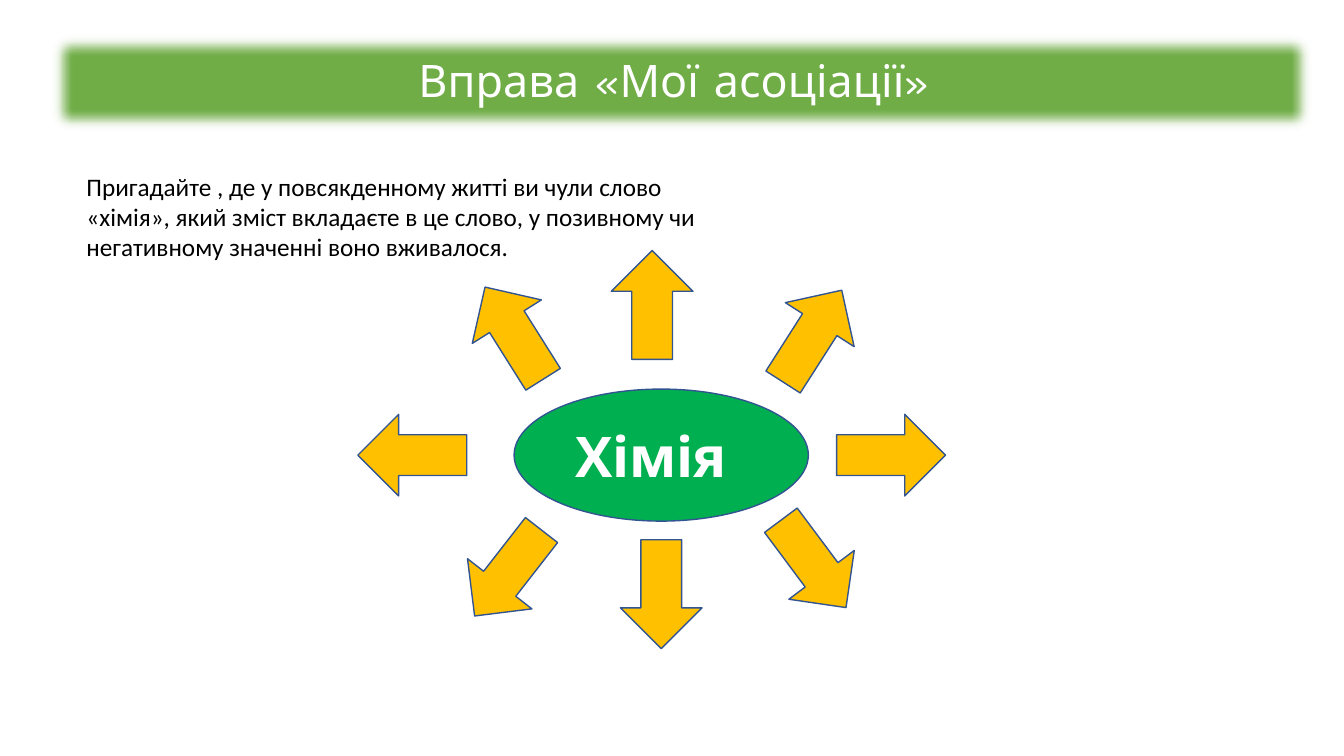
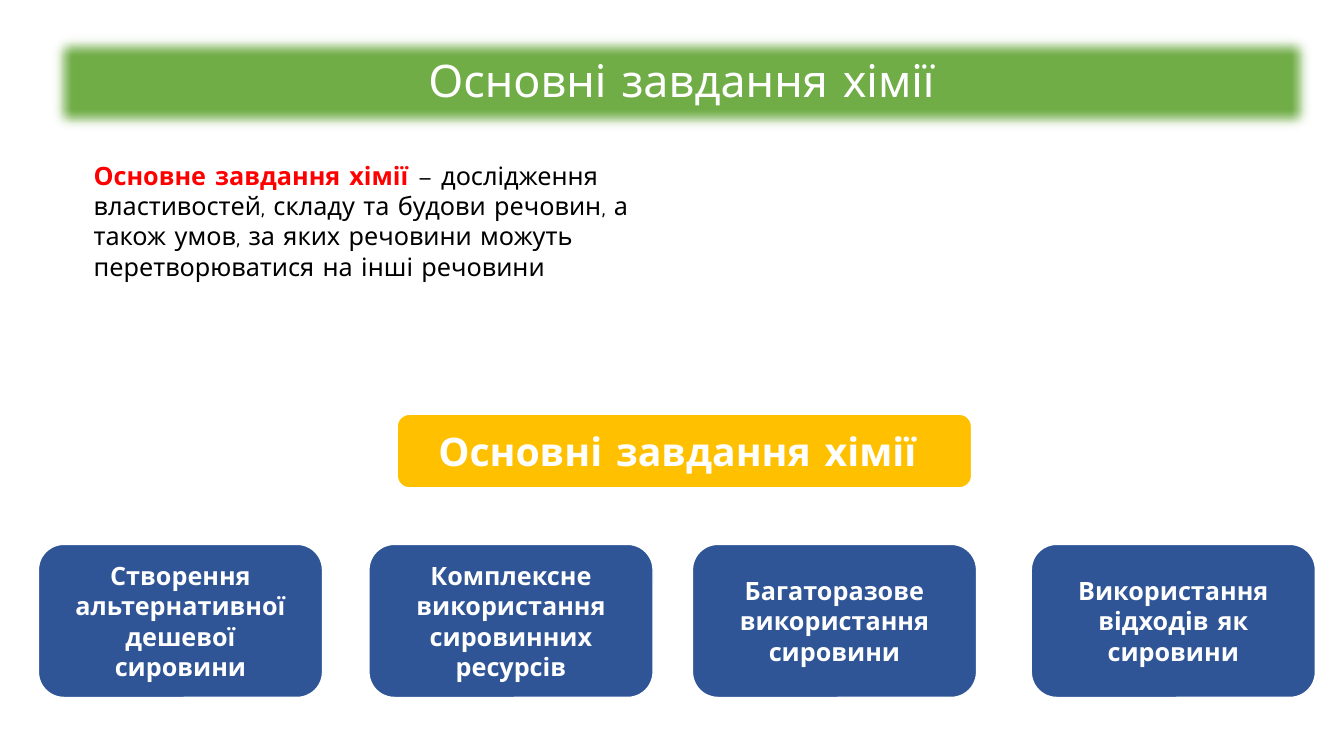
from lxml import etree
from pptx import Presentation
from pptx.dml.color import RGBColor
from pptx.enum.shapes import MSO_SHAPE as Preset
from pptx.enum.text import MSO_ANCHOR as Anchor, MSO_AUTO_SIZE as AutoSize, PP_ALIGN as Align
from pptx.oxml.ns import qn
from pptx.util import Pt

COLORS = {
    "white": "FFFFFF",
    "black": "000000",
    "red": "FF0000",
    "band": "70AD47",
    "oval": "00B050",
    "amber": "FFC000",
    "navy": "2F5597",
    "outline": "325491",
}


def color(name):
    return RGBColor.from_string(COLORS[name])


class Deck:
    """Holds the shared style and the slide being built."""

    display_font = "Comic Neue"
    body_font = "Calibri"
    body_size = 18

    def __init__(self):
        self.presentation = Presentation()
        self.presentation.slide_width = Pt(960)
        self.presentation.slide_height = Pt(540)
        self.slide = None

    def new_slide(self, title):
        blank = self.presentation.slide_layouts[6]
        self.slide = self.presentation.slides.add_slide(blank)
        self.title_band(title)

    def style_font(self, font, size, name, color_name, bold=False):
        font.size = Pt(size)
        font.name = name
        font.bold = bold
        font.color.rgb = color(color_name)

    def shape(self, preset, box, fill, line=None):
        shape = self.slide.shapes.add_shape(preset, *map(Pt, box))
        shape.shadow.inherit = False
        shape.fill.solid()
        shape.fill.fore_color.rgb = color(fill)
        if line:
            shape.line.color.rgb = color(line)
            shape.line.width = Pt(1)
        else:
            shape.line.fill.background()
        return shape

    def label(self, shape, text, size, bold=True):
        frame = shape.text_frame
        frame.word_wrap = True
        frame.vertical_anchor = Anchor.MIDDLE
        paragraph = frame.paragraphs[0]
        paragraph.text = text
        paragraph.alignment = Align.CENTER
        self.style_font(paragraph.font, size, self.display_font, "white", bold)
        return paragraph

    def title_band(self, text):
        band = self.shape(Preset.RECTANGLE, (34, 22.2, 905.8, 74.2), "band")
        effects = band.element.spPr.find(qn("a:effectLst"))
        etree.SubElement(effects, qn("a:softEdge"), rad=str(Pt(10)))
        self.label(band, text, 32, bold=False).line_spacing = 0.9

    def text_box(self, box, font_name, *parts):
        """Each part is (text, color name, bold)."""
        frame = self.slide.shapes.add_textbox(*map(Pt, box)).text_frame
        frame.word_wrap = True
        frame.auto_size = AutoSize.SHAPE_TO_FIT_TEXT
        paragraph = frame.paragraphs[0]
        for text, color_name, bold in parts:
            run = paragraph.add_run()
            run.text = text
            self.style_font(run.font, self.body_size, font_name, color_name, bold)

    def oval(self, box, text):
        self.label(self.shape(Preset.OVAL, box, "oval", "outline"), text, 40)

    def arrow(self, center_x, center_y, rotation):
        width, height = 77.8, 58.3
        box = (center_x - width / 2, center_y - height / 2, width, height)
        self.shape(Preset.RIGHT_ARROW, box, "amber", "outline").rotation = rotation

    def rounded_box(self, box, fill, text, size):
        shape = self.shape(Preset.ROUNDED_RECTANGLE, box, fill, "white")
        self.label(shape, text, size)


def build_associations(deck):
    deck.new_slide("Вправа «Мої асоціації» ")
    deck.text_box(
        (54.7, 118.8, 480.2, 72.7), deck.body_font,
        ("Пригадайте , де у повсякденному житті ви чули слово «хімія», який зміст "
         "вкладаєте в це слово, у позивному чи негативному значенні воно вживалося.",
         "black", False))
    deck.oval((367.2, 277.9, 210.2, 94.3), "Хімія ")

    # Arrows around the oval: centre and rotation
    arrows = [
        (636.5, 325.1, 0),
        (294.5, 325.1, 180),
        (472.3, 424.4, 90),
        (465.8, 217.8, 270),
        (581, 402.8, 53.3),
        (580.3, 240.1, 302.6),
        (367.2, 238, 237.8),
        (362.9, 409.3, 127.9),
    ]
    for arrow in arrows:
        deck.arrow(*arrow)


def build_tasks(deck):
    deck.new_slide("Основні завдання хімії")
    deck.text_box(
        (59.8, 110.9, 406, 94.3), deck.display_font,
        ("Основне завдання хімії ", "red", True),
        ("– дослідження властивостей, складу та будови речовин, а також умов, "
         "за яких речовини можуть перетворюватися на інші речовини", "black", False))
    deck.rounded_box((283.7, 295.9, 410.4, 52.6), "amber", "Основні завдання хімії ", 28)

    # Row of tasks: left edge and text
    tasks = [
        (27.4, "Створення альтернативної дешевої сировини"),
        (263.5, "Комплексне використання сировинних ресурсів"),
        (494.6, "Багаторазове використання сировини"),
        (736.6, "Використання відходів як сировини"),
    ]
    for left, text in tasks:
        deck.rounded_box((left, 388.8, 203, 109.4), "navy", text, deck.body_size)


def main():
    deck = Deck()
    build_associations(deck)
    build_tasks(deck)
    deck.presentation.save("out.pptx")


if __name__ == "__main__":
    main()
